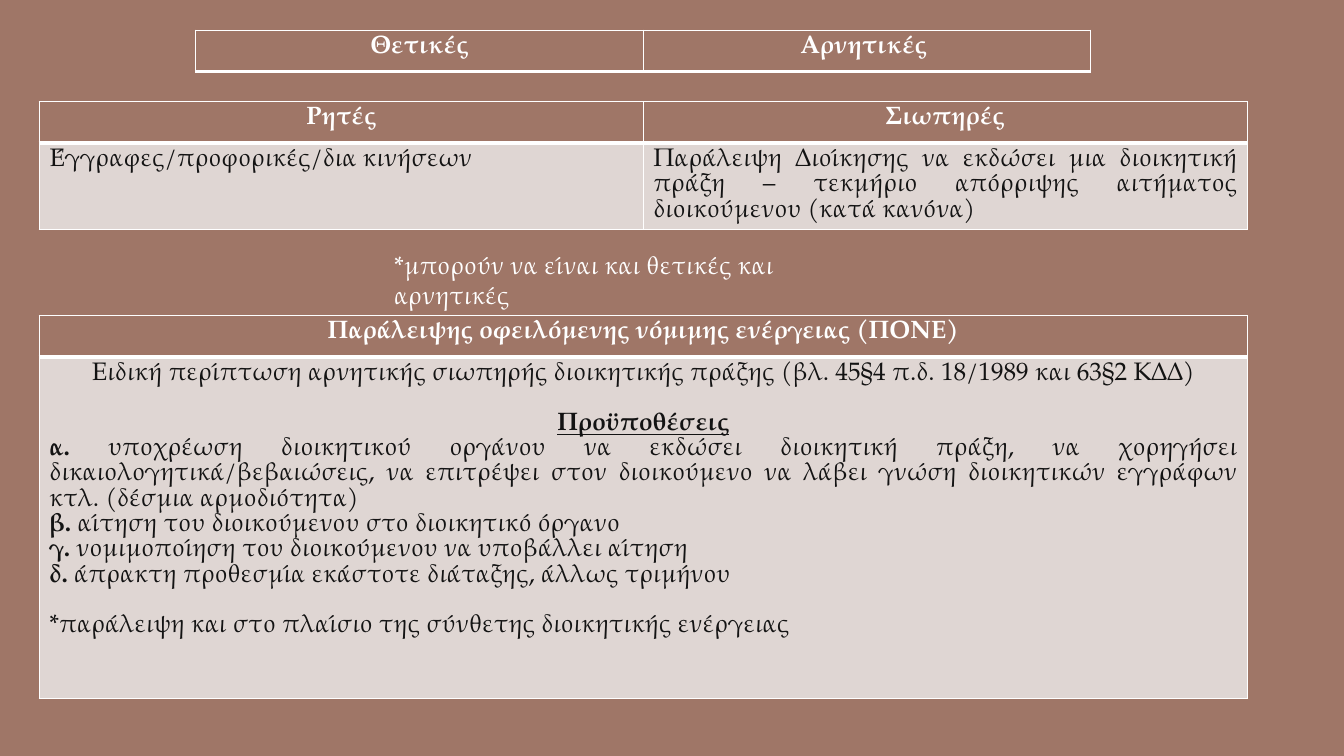
from dataclasses import dataclass

from lxml.etree import SubElement
from pptx import Presentation
from pptx.dml.color import RGBColor
from pptx.enum.text import MSO_AUTO_SIZE, PP_ALIGN as Align
from pptx.oxml.ns import qn
from pptx.util import Inches, Pt

LEFT, CENTER, JUSTIFY = Align.LEFT, Align.CENTER, Align.JUSTIFY


@dataclass(frozen=True)
class Theme:
    font: str = "TeX Gyre Pagella"
    size: int = 18
    gap: int = 18
    background: str = "9F7667"
    panel: str = "DFD6D3"
    light: str = "FFFFFF"
    dark: str = "131313"
    thin: int = 1
    thick: int = 3


THEME = Theme()
SLIDE_WIDTH, SLIDE_HEIGHT = 13.33, 7.5
HEADER_HEIGHT = 0.41

FORM_BODY = [
    [(LEFT, "", "Έγγραφες/προφορικές/δια κινήσεων", ())],
    [(JUSTIFY, "", "Παράλειψη Διοίκησης να εκδώσει μια διοικητική πράξη – τεκμήριο "
      "απόρριψης αιτήματος διοικούμενου (κατά κανόνα)", ())],
]
OMISSION_BODY = [[
    (CENTER, "", "Ειδική περίπτωση αρνητικής σιωπηρής διοικητικής πράξης "
     "(βλ. 45§4 π.δ. 18/1989 και 63§2 ΚΔΔ)", ()),
    (CENTER, "Προϋποθέσεις", "", ("gap", "underline")),
    (JUSTIFY, "α.", " υποχρέωση διοικητικού οργάνου να εκδώσει διοικητική πράξη, να χορηγήσει "
     "δικαιολογητικά/βεβαιώσεις, να επιτρέψει στον διοικούμενο να λάβει γνώση "
     "διοικητικών εγγράφων κτλ. (δέσμια αρμοδιότητα)", ()),
    (JUSTIFY, "β.", " αίτηση του διοικούμενου στο διοικητικό όργανο ", ()),
    (JUSTIFY, "γ.", " νομιμοποίηση του διοικούμενου να υποβάλλει αίτηση", ()),
    (JUSTIFY, "δ.", " άπρακτη προθεσμία εκάστοτε διάταξης, άλλως τριμήνου ", ()),
    (JUSTIFY, "", "*παράλειψη και στο πλαίσιο της σύνθετης διοικητικής ενέργειας ", ("gap",)),
]]
TABLES = [
    (0.39, 1.01, 11.98, ["Ρητές", "Σιωπηρές"], FORM_BODY, 0.86),
    (0.39, 3.13, 11.98, ["Παράλειψης οφειλόμενης νόμιμης ενέργειας (ΠΟΝΕ)"], OMISSION_BODY, 3.39),
    (1.94, 0.3, 8.88, ["Θετικές", "Αρνητικές "], [], 0),
]
NOTE = "*μπορούν να είναι και θετικές και αρνητικές"
NOTE_BOX = (3.81, 2.42, 5.13, 0.4)


def set_font(paragraph, color):
    paragraph.font.name = THEME.font
    paragraph.font.size = Pt(THEME.size)
    paragraph.font.color.rgb = RGBColor.from_string(color)


def write_paragraphs(frame, paragraphs, color):
    for index, (alignment, lead, text, options) in enumerate(paragraphs):
        paragraph = frame.add_paragraph() if index else frame.paragraphs[0]
        paragraph.alignment = alignment
        paragraph.space_before = Pt(THEME.gap if "gap" in options else 0)
        set_font(paragraph, color)
        for content, bold in ((lead, True), (text, False)):
            if content:
                run = paragraph.add_run()
                run.text = content
                run.font.bold = bold
                run.font.underline = "underline" in options


def set_borders(cell, top, bottom):
    properties = cell._tc.get_or_add_tcPr()
    sides = {"lnL": THEME.thin, "lnR": THEME.thin, "lnT": top, "lnB": bottom}
    for side, width in sides.items():
        line = SubElement(properties, qn("a:" + side), w=str(Pt(width)))
        fill = SubElement(line, qn("a:solidFill"))
        SubElement(fill, qn("a:srgbClr"), val=THEME.light)


def fill_cell(cell, paragraphs, is_header):
    text_color, fill_color = (
        (THEME.light, THEME.background) if is_header else (THEME.dark, THEME.panel))
    write_paragraphs(cell.text_frame, paragraphs, text_color)
    if is_header:
        set_borders(cell, THEME.thin, THEME.thick)
    else:
        set_borders(cell, THEME.thick, THEME.thin)
    cell.fill.solid()
    cell.fill.fore_color.rgb = RGBColor.from_string(fill_color)


def add_grid(slide, left, top, width, headings, body, body_height):
    rows = [[[(CENTER, heading, "", ())] for heading in headings]]
    if body:
        rows.append(body)
    heights = [HEADER_HEIGHT, body_height][:len(rows)]
    box = [Inches(length) for length in (left, top, width, sum(heights))]
    table = slide.shapes.add_table(len(rows), len(headings), *box).table
    table.first_row = table.horz_banding = False
    for column in table.columns:
        column.width = Inches(width / len(headings))
    for row_index, (cells, height) in enumerate(zip(rows, heights)):
        table.rows[row_index].height = Inches(height)
        for column_index, paragraphs in enumerate(cells):
            fill_cell(table.cell(row_index, column_index), paragraphs, row_index == 0)


def add_note(slide):
    frame = slide.shapes.add_textbox(*map(Inches, NOTE_BOX)).text_frame
    frame.word_wrap = True
    frame.auto_size = MSO_AUTO_SIZE.SHAPE_TO_FIT_TEXT
    paragraph = frame.paragraphs[0]
    paragraph.text = NOTE
    set_font(paragraph, THEME.light)


def main():
    presentation = Presentation()
    presentation.slide_width = Inches(SLIDE_WIDTH)
    presentation.slide_height = Inches(SLIDE_HEIGHT)
    slide = presentation.slides.add_slide(presentation.slide_layouts[6])
    slide.background.fill.solid()
    slide.background.fill.fore_color.rgb = RGBColor.from_string(THEME.background)
    for table in TABLES:
        add_grid(slide, *table)
    add_note(slide)
    presentation.save("out.pptx")


if __name__ == "__main__":
    main()
